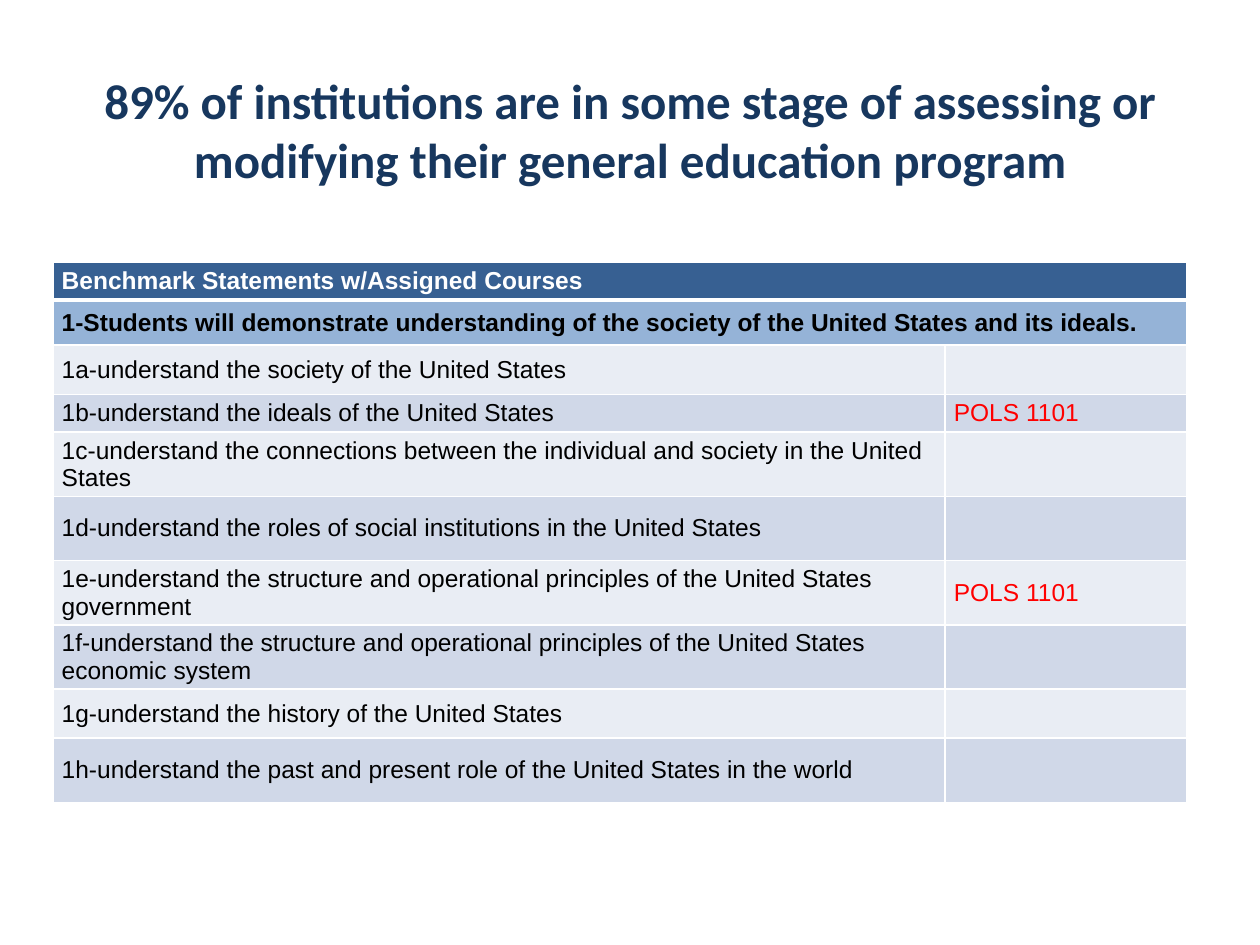
from typing import NamedTuple

from lxml import etree
from pptx import Presentation
from pptx.dml.color import RGBColor
from pptx.enum import text
from pptx.oxml import ns
from pptx import util as u

NAVY = RGBColor(0x17, 0x37, 0x5E)
BLUE = RGBColor(0x37, 0x60, 0x92)
SKY = RGBColor(0x95, 0xB3, 0xD7)
BANDS = (RGBColor(0xE9, 0xED, 0xF4), RGBColor(0xD0, 0xD8, 0xE8))
WHITE = RGBColor(255, 255, 255)
BLACK = RGBColor(0, 0, 0)
RED = RGBColor(255, 0, 0)


class Goal(NamedTuple):
    words: str
    high: float
    course: str = ""


HEADS = (
    (Goal("Benchmark Statements w/Assigned Courses", 0.3), BLUE, WHITE, 3),
    (Goal("1-Students will demonstrate understanding of the society of the "
          "United States and its ideals.", 0.36), SKY, BLACK, 1),
)
GOALS = (
    Goal("1a-understand the society of the United States", 0.39),
    Goal("1b-understand the ideals of the United States", 0.3, "POLS 1101"),
    Goal("1c-understand the connections between the individual and society "
         "in the United States", 0.51),
    Goal("1d-understand the roles of social institutions in the United States", 0.51),
    Goal("1e-understand the structure and operational principles of the "
         "United States government", 0.51, "POLS 1101"),
    Goal("1f-understand the structure and operational principles of the "
         "United States economic system", 0.51),
    Goal("1g-understand the history of the United States", 0.39),
    Goal("1h-understand the past and present role of the United States "
         "in the world", 0.51),
)
COLS = (7.08, 1.92)


def write(frame, words: str, *, size: float = 14, face: str = "Arial",
          color: RGBColor = BLACK, bold: bool = False, align=None) -> None:
    para = frame.paragraphs[0]
    para.alignment = align
    font = para.font
    if words:
        run = para.add_run()
        run.text = words
        font = run.font
    font.size, font.name, font.bold = u.Pt(size), face, bold
    font.color.rgb = color


def edge(cell, base: float = 1) -> None:
    """Draw white borders; base is the width of the lower one in points."""
    props = cell._tc.get_or_add_tcPr()
    for spot, (side, wide) in enumerate(zip("LRTB", (1, 1, 1, base))):
        line = etree.Element(ns.qn(f"a:ln{side}"), w=str(u.Pt(wide)))
        fill = etree.SubElement(line, ns.qn("a:solidFill"))
        etree.SubElement(fill, ns.qn("a:srgbClr"), val=str(WHITE))
        props.insert(spot, line)


def paint(cell, words: str, fill: RGBColor, *, base: float = 1, **form) -> None:
    cell.fill.solid()
    cell.fill.fore_color.rgb = fill
    cell.margin_left = cell.margin_right = u.Inches(0.07)
    cell.margin_top = cell.margin_bottom = 0
    cell.vertical_anchor = text.MSO_ANCHOR.MIDDLE
    write(cell.text_frame, words, **form)
    edge(cell, base)


def main() -> None:
    deck = Presentation()
    deck.slide_width, deck.slide_height = u.Inches(10), u.Inches(7.5)
    slide = deck.slides.add_slide(deck.slide_layouts[5])

    # Title
    title = slide.shapes.title
    title.left, title.top = u.Inches(0.5), u.Inches(0.3)
    title.width, title.height = u.Inches(9), u.Inches(1.45)
    title.text_frame.vertical_anchor = text.MSO_ANCHOR.MIDDLE
    write(title.text_frame, "89% of institutions are in some stage of assessing "
          "or modifying their general education program", size=28,
          face="Calibri", color=NAVY, bold=True, align=text.PP_ALIGN.CENTER)

    # Table grid
    rows = [head[0] for head in HEADS] + list(GOALS)
    grid = slide.shapes.add_table(
        len(rows), len(COLS), u.Inches(0.42), u.Inches(2.08),
        u.Inches(sum(COLS)), u.Inches(sum(r.high for r in rows))).table
    for col, wide in zip(grid.columns, COLS):
        col.width = u.Inches(wide)
    for row, goal in zip(grid.rows, rows):
        row.height = u.Inches(goal.high)

    # Heading rows span both columns
    for at, (head, fill, ink, base) in enumerate(HEADS):
        paint(grid.cell(at, 0), head.words, fill, base=base, color=ink, bold=True)
        paint(grid.cell(at, 1), "", fill, base=base)
        grid.cell(at, 0).merge(grid.cell(at, 1))

    # Banded goals with their courses
    for at, goal in enumerate(GOALS):
        fill = BANDS[at % 2]
        row = at + len(HEADS)
        paint(grid.cell(row, 0), goal.words, fill)
        paint(grid.cell(row, 1), goal.course, fill, color=RED)

    deck.save("out.pptx")


if __name__ == "__main__":
    main()
